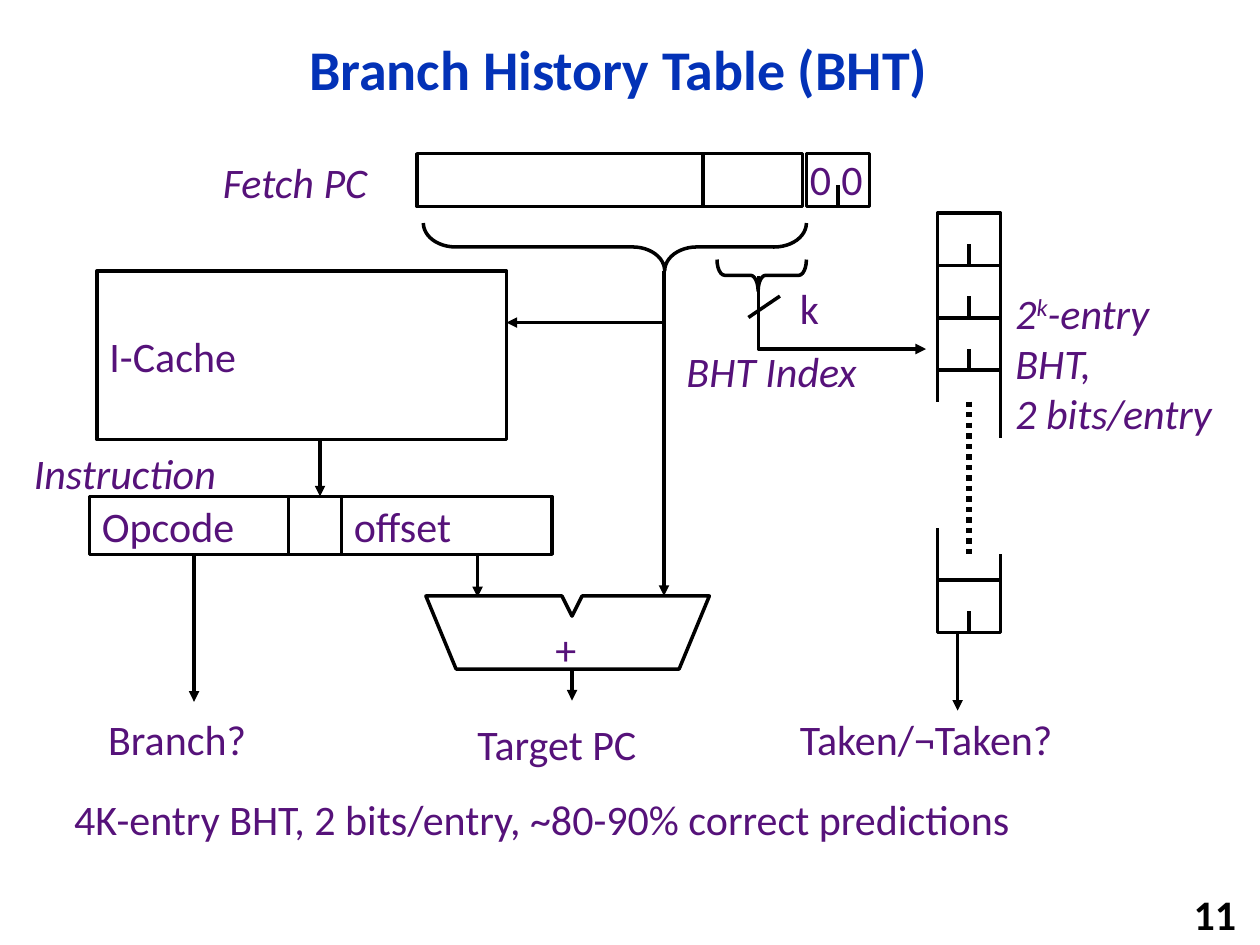
from itertools import accumulate
from lxml.etree import SubElement
from pptx import Presentation
from pptx.dml.color import RGBColor
from pptx.enum.dml import MSO_LINE
from pptx.enum.shapes import MSO_CONNECTOR, MSO_SHAPE
from pptx.enum.text import MSO_ANCHOR, MSO_AUTO_SIZE, PP_ALIGN
from pptx.oxml.ns import qn
from pptx.util import Inches, Pt

INK, TEXT, BLUE, WHITE = "000000", "56127A", "0332B7", "FFFFFF"
COLS, ROWS = 100, 75  # grid of tenths of an inch


def unit(*cells):
    return [Inches(cell / 10) for cell in cells]


def tint(code):
    return RGBColor.from_string(code)


def add_run(para, text, size=24, color=TEXT, bold=False, slant=False, base=0):
    run = para.add_run()
    run.text = text
    font = run.font
    font.name, font.size, font.bold, font.italic = "Calibri", Pt(size), bold, slant
    font.color.rgb = tint(color)
    if base:
        run._r.get_or_add_rPr().set("baseline", str(base * 1000))


def label(slide, x, y, w, text="", h=5.1, wrap=False, **style):
    frame = slide.shapes.add_textbox(*unit(x, y, w, h)).text_frame
    frame.word_wrap = wrap
    frame.auto_size = MSO_AUTO_SIZE.SHAPE_TO_FIT_TEXT
    if text:
        add_run(frame.paragraphs[0], text, **style)
    return frame


def stroke(shape, width=2):
    shape.line.color.rgb = tint(INK)
    shape.line.width = Pt(width)


def point(shape):
    line = shape.line._get_or_add_ln()
    SubElement(line, qn("a:tailEnd"), type="triangle")


def cell(slide, x, y, w, h, text=""):
    box = slide.shapes.add_shape(MSO_SHAPE.RECTANGLE, *unit(x, y, w, h))
    box.shadow.inherit = False
    box.fill.solid()
    box.fill.fore_color.rgb = tint(WHITE)
    stroke(box)
    if text:
        frame = box.text_frame
        frame.vertical_anchor = MSO_ANCHOR.MIDDLE
        frame.paragraphs[0].alignment = PP_ALIGN.LEFT
        add_run(frame.paragraphs[0], text)
    return box


def wire(slide, x1, y1, x2, y2, arrow=False, width=2):
    line = slide.shapes.add_connector(MSO_CONNECTOR.STRAIGHT, *unit(x1, y1, x2, y2))
    stroke(line, width)
    SubElement(line._element.spPr, qn("a:effectLst"))
    if arrow:
        point(line)
    return line


def split(slide, x, y, w, h, height=1.7):
    """A cell with a short tick between its two bits."""
    box = cell(slide, x, y, w, h)
    mid = x + w / 2
    wire(slide, mid, y + h, mid, y + h - height).begin_connect(box, 2)


def trace(slide, spots, close=False):
    spots = [unit(*spot) for spot in spots]
    pen = slide.shapes.build_freeform(*spots[0])
    pen.add_line_segments(spots[1:], close=close)
    shape = pen.convert_to_shape()
    shape.shadow.inherit = False
    if close:
        shape.fill.solid()
        shape.fill.fore_color.rgb = tint(WHITE)
    else:
        shape.fill.background()
    stroke(shape)
    return shape


def brace(slide, x, y, w, h, curve, tip):
    """A right brace turned to point down, filling the given box."""
    left, top = x + (w - h) / 2, y + (h - w) / 2
    shape = slide.shapes.add_shape(MSO_SHAPE.RIGHT_BRACE, *unit(left, top, h, w))
    shape.rotation = 90
    shape.adjustments[0], shape.adjustments[1] = curve, tip
    shape.shadow.inherit = False
    shape.fill.background()
    stroke(shape)


def head(slide, x, y, w, h):
    title = slide.shapes.title
    title.left, title.top, title.width, title.height = unit(x, y, w, h)
    frame = title.text_frame
    frame.vertical_anchor = MSO_ANCHOR.MIDDLE
    para = frame.paragraphs[0]
    para.alignment, para.line_spacing = PP_ALIGN.CENTER, 0.9
    add_run(para, "Branch History Table (BHT)", 32, BLUE, bold=True)


def fetch(slide, x, y, w, h):
    bits = 5
    cell(slide, x, y, 30.6, h)
    split(slide, x + w - bits, y, bits, h)
    for left in (30.2, 32.7):
        label(slide, x + left, y - 0.5, 3.7, "0")
    wire(slide, x + 22.7, y, x + 22.7, y + h)
    label(slide, x - 16.4, y - 0.3, 14.5, "Fetch PC", slant=True)
    brace(slide, x + 0.5, y + 5.5, 30.4, 3.8, 0.67, 0.37)


def cache(slide, x, y, w, h):
    cell(slide, x, y, w, h, "I-Cache")
    side, turn = x + w + 12.5, y + 4.1
    point(trace(slide, [(side, y), (side, turn), (x + w, turn)]))
    wire(slide, side, turn, side, y + 25.8, arrow=True)
    wire(slide, x + 17.7, y + h, x + 17.7, y + 17.9, arrow=True)


def fields(slide, x, y, w, h):
    widths = [15.8, 4.2, w - 20]
    starts = accumulate([x] + widths)
    for left, width, name in zip(starts, widths, ("Opcode", "", "offset")):
        cell(slide, left, y, width, h, name)
    label(slide, x - 5.4, y - 4.4, 17.5, "Instruction", slant=True)
    for along, drop in ((8.3, 11.7), (30.8, 3.4)):
        wire(slide, x + along, y + h, x + along, y + h + drop, arrow=True)
    label(slide, x + 0.5, y + 16.7, 13.2, "Branch?")


def adder(slide, x, y, w, h):
    mid, base = x + 11.6, y + h
    trace(slide, [(x, y), (mid - 0.8, y), (mid, y + 1.6), (mid + 0.8, y),
                  (x + w, y), (x + w - 2.4, base), (x + 2.4, base)], close=True)
    label(slide, mid - 2.3, y + 1.7, 3.7, "+")
    wire(slide, mid, base, mid, base + 2.5, arrow=True)
    label(slide, x + 3.1, y + 9.2, 15.1, "Target PC")


def index(slide, x, y, w, h):
    brace(slide, x, y, w, h, 0.24, 0.54)
    mid, turn = x + 3.3, y + 7.1
    point(trace(slide, [(mid, y + 1.3), (mid, turn), (mid + 13.3, turn)]))
    wire(slide, mid - 0.8, y + 4.6, mid + 1.7, y + 2.9)
    label(slide, x + 5.6, y + 1.3, 3.6, "k")
    label(slide, x - 3.4, y + 6.3, 21.7, "BHT Index", wrap=True, slant=True)


def table(slide, x, y, w, h):
    step, mid, end = h / 8, x + w / 2, x + w
    for row in (0, 1, 2, 7):
        split(slide, x, y + row * step, w, step)
    # Open sides between the shown entries
    for side, start, stop in ((x, 3, 3.6), (x, 7, 6), (end, 7, 6.5), (end, 3, 4.3)):
        wire(slide, side, y + start * step, side, y + stop * step)
    dots = wire(slide, mid, y + 3.6 * step, mid, y + 6.5 * step, width=3)
    dots.line.dash_style = MSO_LINE.ROUND_DOT
    wire(slide, x + 1.6, y + h, x + 1.6, y + h + 6.2, arrow=True)
    label(slide, x - 11.9, y + 39.2, 23, "Taken/¬Taken?")
    # Size of the table
    note = label(slide, end + 0.2, y + 5.4, 18.7, h=13.1)
    for text, base in (("2", 0), ("k", 30), ("-entry", 0)):
        add_run(note.paragraphs[0], text, slant=True, base=base)
    for text in ("BHT,", "2 bits/entry"):
        add_run(note.add_paragraph(), text, slant=True)


def foot(slide, x, y, w, h):
    label(slide, x, y, w - 3.3, "4K-entry BHT, 2 bits/entry, ~80-90% correct predictions",
          h=5, wrap=True)
    page = label(slide, x + w - 12, y + h - 4.8, 12, h=4.8, wrap=True)
    page.paragraphs[0].alignment = PP_ALIGN.RIGHT
    add_run(page.paragraphs[0], "11", color=INK, bold=True)


def main():
    deck = Presentation()
    deck.slide_width, deck.slide_height = unit(COLS, ROWS)
    slide = deck.slides.add_slide(deck.slide_layouts[5])
    head(slide, 9.2, 1.7, 79.8, 8.1)
    foot(slide, 4.9, 62.5, 94.2, 12.3)
    fetch(slide, 33.1, 12.2, 35.9, 4.2)
    adder(slide, 33.8, 47.3, 22.5, 5.8)
    cache(slide, 7.7, 21.5, 32.5, 13.4)
    fields(slide, 7.1, 39.4, 36.7, 4.6)
    index(slide, 56.9, 20.6, 7.1, 2.5)
    table(slide, 74.4, 16.9, 5, 33.3)
    deck.save("out.pptx")


if __name__ == "__main__":
    main()
